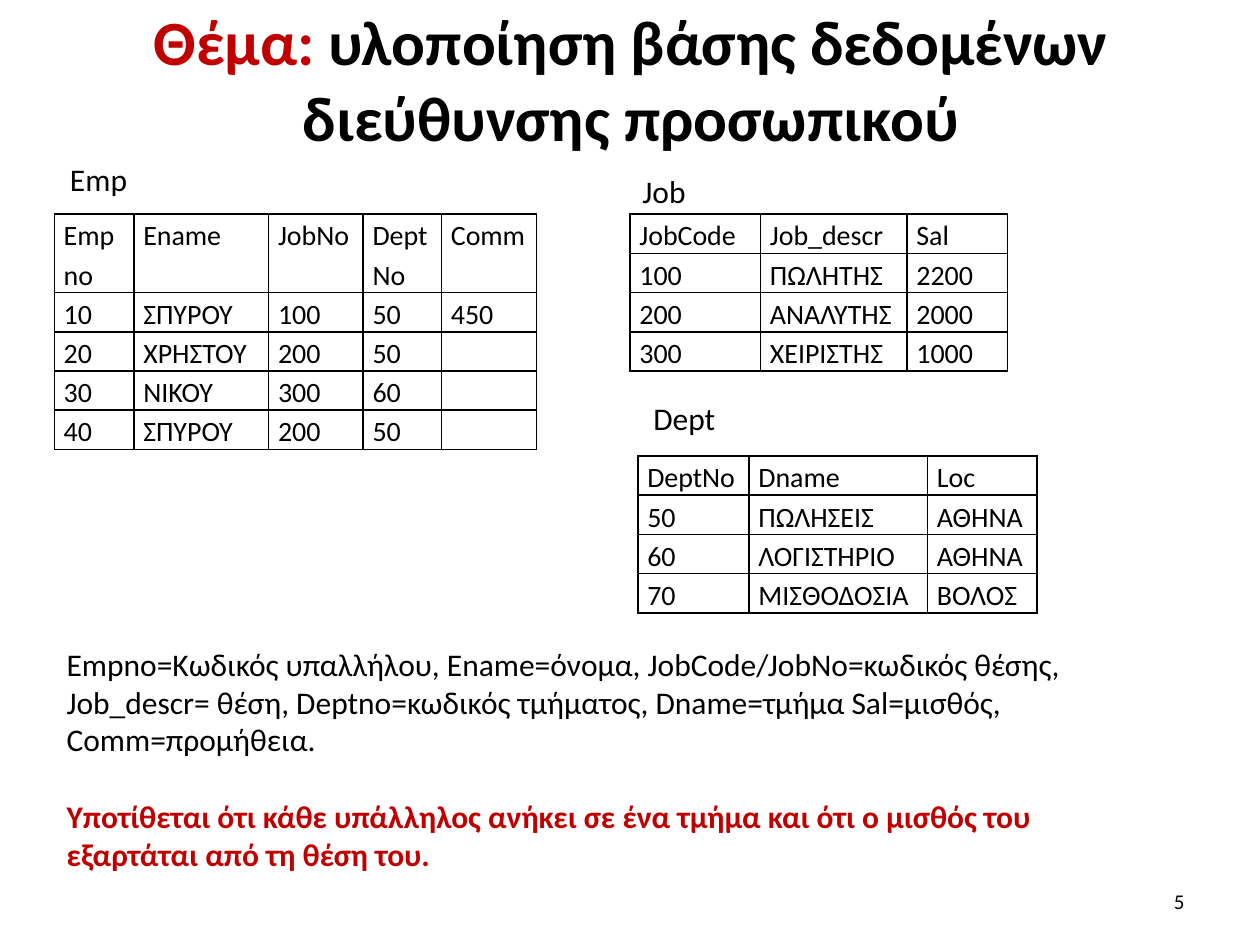
from lxml import etree
from pptx import Presentation
from pptx.dml.color import RGBColor
from pptx.enum.text import MSO_ANCHOR, MSO_AUTO_SIZE, PP_ALIGN
from pptx.oxml.ns import qn
from pptx.util import Pt

MIDDLE = MSO_ANCHOR.MIDDLE
NO_FIT = MSO_AUTO_SIZE.NONE
LEFT, CENTER, RIGHT = PP_ALIGN.LEFT, PP_ALIGN.CENTER, PP_ALIGN.RIGHT

FONT = "Calibri"
BLACK, RED = "000000", "C00000"
ROW_HEIGHT = 22.4
CELL_MARGIN = 5.4

TITLE = [("Θέμα:", RED), (" υλοποίηση βάσης δεδομένων διεύθυνσης προσωπικού", BLACK)]
TITLE_PLACE = (36.5, 9.4, 648, 71)

TABLES = [
    {
        "place": (31, 122.4),
        "columns": [45.5, 77, 54, 44.8, 54.3],
        "header_lines": 2,
        "rows": [
            ["Empno", "Ename", "JobΝο", "DeptNo", "Comm"],
            ["10", "ΣΠΥΡΟΥ", "100", "50", "450"],
            ["20", "ΧΡΗΣΤΟΥ", "200", "50", ""],
            ["30", "ΝΙΚΟΥ", "300", "60", ""],
            ["40", "ΣΠΥΡΟΥ", "200", "50", ""],
        ],
    },
    {
        "place": (360, 122.4),
        "columns": [74.6, 83.7, 57.6],
        "header_lines": 1,
        "rows": [
            ["JobCode", "Job_descr", "Sal"],
            ["100", "ΠΩΛΗΤΗΣ", "2200"],
            ["200", "ΑΝΑΛΥΤΗΣ", "2000"],
            ["300", "ΧΕΙΡΙΣΤΗΣ", "1000"],
        ],
    },
    {
        "place": (364.5, 260.6),
        "columns": [63.5, 102, 62.6],
        "header_lines": 1,
        "rows": [
            ["DeptNo", "Dname", "Loc"],
            ["50", "ΠΩΛΗΣΕΙΣ", "ΑΘΗΝΑ"],
            ["60", "ΛΟΓΙΣΤΗΡΙΟ", "ΑΘΗΝΑ"],
            ["70", "ΜΙΣΘΟΔΟΣΙΑ", "ΒΟΛΟΣ"],
        ],
    },
]

LABELS = [
    ("Emp", (32.9, 88, 123, 29)),
    ("Job", (360, 94.5, 40, 29)),
    ("Dept", (366.2, 224.6, 51, 29)),
]

NOTES = [
    ("Empno=Κωδικός υπαλλήλου, Ename=όνομα, JobCode/JobNo=κωδικός θέσης, "
     "Job_descr= θέση, Deptno=κωδικός τμήματος, Dname=τμήμα Sal=μισθός, "
     "Comm=προμήθεια.", BLACK, False),
    ("Υποτίθεται ότι κάθε υπάλληλος ανήκει σε ένα τμήμα και ότι ο μισθός του "
     "εξαρτάται από τη θέση του.", RED, True),
]
NOTES_PLACE = (31, 365, 595.5, 138)
NOTES_GAP = 22

PAGE_NUMBER = "5"
NUMBER_PLACE = (516.2, 500.4, 167.8, 28.8)


def color(value):
    """Turn a hex string into a colour."""
    return RGBColor.from_string(value)


def style(span, size, ink=BLACK, bold=False):
    """Format one run."""
    span.font.name = FONT
    span.font.size = Pt(size)
    span.font.bold = bold
    span.font.color.rgb = color(ink)


def add_text(page, place, paragraphs, size, align=LEFT, gap=0):
    """Add a text box with one formatted run per paragraph."""
    box = page.shapes.add_textbox(*map(Pt, place))
    frame = box.text_frame
    frame.word_wrap = True
    frame.text = "\n".join(text for text, _, _ in paragraphs)
    for index, (para, (_, ink, bold)) in enumerate(zip(frame.paragraphs, paragraphs)):
        para.alignment = align
        if index:
            para.space_before = Pt(gap)
        style(para.runs[0], size, ink, bold)
    return box


def add_borders(cell):
    """Draw a thin black line on all four sides of a cell."""
    properties = cell._tc.get_or_add_tcPr()
    for index, side in enumerate(("a:lnL", "a:lnR", "a:lnT", "a:lnB")):
        line = etree.Element(qn(side), w=str(Pt(1)))
        fill = etree.SubElement(line, qn("a:solidFill"))
        etree.SubElement(fill, qn("a:srgbClr"), val=BLACK)
        properties.insert(index, line)


def fill_cell(cell, text):
    """Write, format and frame one table cell."""
    cell.margin_left = cell.margin_right = Pt(CELL_MARGIN)
    cell.margin_top = cell.margin_bottom = 0
    cell.fill.background()
    add_borders(cell)
    if text:
        cell.text = text
        para = cell.text_frame.paragraphs[0]
        para.line_spacing = 1.15
        style(para.runs[0], 16)


def add_grid(page, place, columns, header_lines, rows):
    """Add a plain bordered table."""
    heights = [ROW_HEIGHT * header_lines] + [ROW_HEIGHT] * (len(rows) - 1)
    size = (sum(columns), sum(heights))
    table = page.shapes.add_table(
        len(rows), len(columns), *map(Pt, place + size)).table
    table.first_row = table.horz_banding = False
    for column, width in zip(table.columns, columns):
        column.width = Pt(width)
    for row, height, texts in zip(table.rows, heights, rows):
        row.height = Pt(height)
        for cell, text in zip(row.cells, texts):
            fill_cell(cell, text)


def add_title(page):
    """Place and format the title."""
    title = page.shapes.title
    title.left, title.top, title.width, title.height = map(Pt, TITLE_PLACE)
    frame = title.text_frame
    frame.auto_size = NO_FIT
    frame.word_wrap = True
    frame.vertical_anchor = MIDDLE
    para = frame.paragraphs[0]
    para.alignment = CENTER
    for text, ink in TITLE:
        span = para.add_run()
        span.text = text
        style(span, 36, ink, True)


def main():
    """Build the slide and save it."""
    deck = Presentation()
    deck.slide_width, deck.slide_height = Pt(720), Pt(540)
    page = deck.slides.add_slide(deck.slide_layouts[5])
    add_title(page)
    number = add_text(page, NUMBER_PLACE, [(PAGE_NUMBER, BLACK, False)], 12, RIGHT)
    number.text_frame.vertical_anchor = MIDDLE
    for table in TABLES:
        add_grid(page, **table)
    for text, place in LABELS:
        add_text(page, place, [(text, BLACK, False)], 18)
    add_text(page, NOTES_PLACE, NOTES, 18, gap=NOTES_GAP)
    deck.save("out.pptx")


if __name__ == "__main__":
    main()
